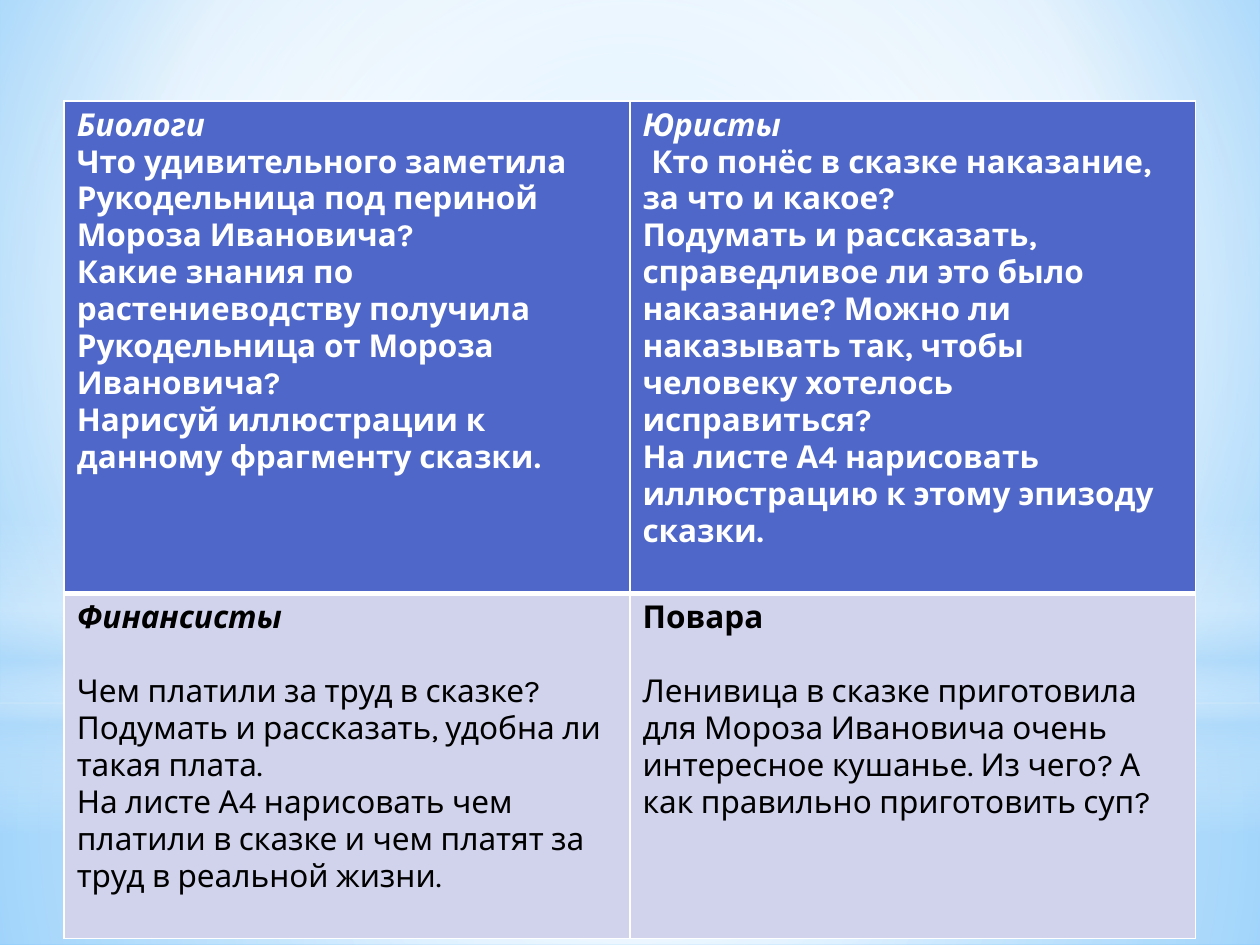
from lxml.etree import SubElement
from pptx import Presentation
from pptx.dml.color import RGBColor
from pptx.enum.shapes import MSO_SHAPE
from pptx.oxml.ns import qn
from pptx.util import Inches, Pt

WHITE, PALE, BLUE, LILAC, BLACK = "FFFFFF", "B4DCFA", "4E67C8", "D0D3EB", "000000"
CENTER = (50, 50, 50, 50)

GLOWS = [
    (MSO_SHAPE.RECTANGLE, (0, 5.58, 10, 1.92),
     [(0, WHITE, 91), (37, WHITE, 76), (100, PALE, 79)], CENTER),
    (MSO_SHAPE.RECTANGLE, (0, 0, 10, 5.58),
     [(0, WHITE, 89), (48, WHITE, 62), (100, PALE, 79)], CENTER),
    (MSO_SHAPE.RECTANGLE, (0, 4.12, 10, 2.5),
     [(0, WHITE, 0), (29, WHITE, 30), (45, PALE, 40),
      (55, WHITE, 26), (65, PALE, 60), (100, WHITE, 0)], None),
    (MSO_SHAPE.OVAL, (0, 1.75, 10, 5.58),
     [(0, WHITE, 100), (56, WHITE, 0)], CENTER),
]

TASKS = [
    [["Биологи",
      "Что удивительного заметила Рукодельница под периной Мороза Ивановича?",
      "Какие знания по растениеводству получила Рукодельница от Мороза Ивановича?",
      "Нарисуй иллюстрации к данному фрагменту сказки."],
     ["Юристы",
      "Кто понёс в сказке наказание, за что и какое?",
      "Подумать и рассказать, справедливое ли это было наказание? "
      "Можно ли наказывать так, чтобы человеку хотелось исправиться?",
      "На листе А4 нарисовать иллюстрацию к этому эпизоду сказки."]],
    [["Финансисты",
      "Чем платили за труд в сказке?",
      "Подумать и рассказать, удобна ли такая плата.",
      "На листе А4 нарисовать чем платили в сказке и чем платят за труд в реальной жизни."],
     ["Повара",
      "Ленивица в сказке приготовила для Мороза Ивановича очень интересное кушанье. "
      "Из чего? А как правильно приготовить суп?"]],
]

ROWS = [
    {"height": 3.91, "fill": BLUE, "color": WHITE, "bold": True, "gap": 0,
     "edges": {"L": 1, "R": 1, "T": 1, "B": 3}},
    {"height": 2.74, "fill": LILAC, "color": BLACK, "bold": False, "gap": 21,
     "edges": {"L": 1, "R": 1, "T": 3, "B": 1}},
]


def tint(code):
    return RGBColor.from_string(code)


class Deck:
    font = {"name": "Karla", "size": Pt(18)}

    def __init__(self):
        self.show = Presentation()
        self.show.slide_width, self.show.slide_height = Inches(10), Inches(7.5)
        self.slide = self.show.slides.add_slide(self.show.slide_layouts[6])

    def blend(self, host, stops, focus):
        solid = host.find(qn("a:solidFill"))
        grad = SubElement(host, qn("a:gradFill"), rotWithShape="1")
        host.replace(solid, grad)
        chain = SubElement(grad, qn("a:gsLst"))
        for place, code, alpha in stops:
            stop = SubElement(chain, qn("a:gs"), pos=str(place * 1000))
            color = SubElement(stop, qn("a:srgbClr"), val=code)
            if alpha < 100:
                SubElement(color, qn("a:alpha"), val=str(alpha * 1000))
        if focus:
            ring = SubElement(grad, qn("a:path"), path="circle")
            sides = {side: str(part * 1000) for side, part in zip("ltrb", focus)}
            SubElement(ring, qn("a:fillToRect"), **sides)
        else:
            SubElement(grad, qn("a:lin"), ang="5400000", scaled="0")

    def back(self, stops, focus):
        self.slide.background.fill.solid()
        host = self.slide.element.find(".//" + qn("p:bgPr"))
        self.blend(host, stops, focus)

    def glow(self, kind, place, stops, focus):
        shape = self.slide.shapes.add_shape(kind, *map(Inches, place))
        shape.shadow.inherit = False
        shape.line.fill.background()
        shape.fill.solid()
        self.blend(shape.element.spPr, stops, focus)

    def edge(self, cell, edges):
        props = cell._tc.get_or_add_tcPr()
        for spot, (side, width) in enumerate(edges.items()):
            line = SubElement(props, qn("a:ln" + side), w=str(int(Pt(width))))
            fill = SubElement(line, qn("a:solidFill"))
            SubElement(fill, qn("a:srgbClr"), val=WHITE)
            props.insert(spot, line)

    def text(self, cell, lines, look):
        frame = cell.text_frame
        for spot, words in enumerate(lines):
            para = frame.add_paragraph() if spot else frame.paragraphs[0]
            run = para.add_run()
            run.text = words
            head = spot == 0
            style = {**self.font, "bold": head or look["bold"],
                     "italic": head and words != "Повара"}
            for name, value in style.items():
                setattr(run.font, name, value)
            run.font.color.rgb = tint(look["color"])
            if head:
                para.space_after = Pt(look["gap"])
            if words.startswith("Кто"):
                para._p.get_or_add_pPr().set("indent", str(int(Inches(0.07))))

    def table(self, place, tasks, looks):
        grid = self.slide.shapes.add_table(
            len(tasks), len(tasks[0]), *map(Inches, place)).table
        for row, look, texts in zip(grid.rows, looks, tasks):
            row.height = Inches(look["height"])
            for cell, lines in zip(row.cells, texts):
                cell.fill.solid()
                cell.fill.fore_color.rgb = tint(look["fill"])
                self.edge(cell, look["edges"])
                self.text(cell, lines, look)


def main():
    deck = Deck()
    deck.back([(0, "9ED5FF", 100), (60, WHITE, 100), (100, "5BB9FF", 100)],
              (20, 10, 20, 60))
    for glow in GLOWS:
        deck.glow(*glow)
    deck.table((0.51, 0.8, 8.98, 6.65), TASKS, ROWS)
    deck.show.save("out.pptx")


if __name__ == "__main__":
    main()
